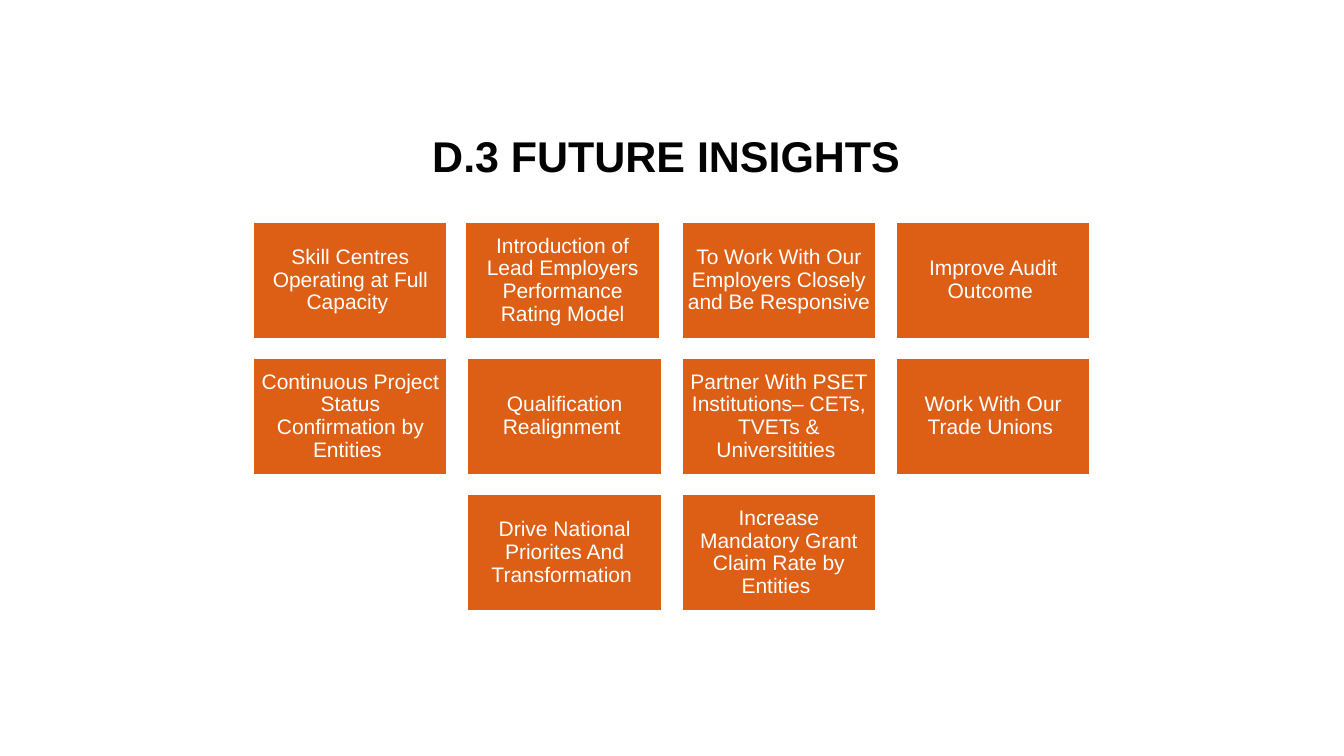
from pptx import Presentation
from pptx.dml.color import RGBColor
from pptx.enum.shapes import MSO_SHAPE
from pptx.enum.text import MSO_ANCHOR, PP_ALIGN
from pptx.util import Cm, Pt

ORANGE = RGBColor(0xDD, 0x5E, 0x15)
WHITE = RGBColor(0xFF, 0xFF, 0xFF)
BLACK = RGBColor(0x03, 0x03, 0x04)


def style(frame, size, color, bold, inset):
    frame.word_wrap = True
    frame.vertical_anchor = MSO_ANCHOR.MIDDLE
    frame.margin_left = frame.margin_right = Cm(inset)
    frame.margin_top = frame.margin_bottom = Cm(inset)
    para = frame.paragraphs[0]
    para.alignment = PP_ALIGN.CENTER
    para.line_spacing = 0.9
    font = para.runs[0].font
    font.name = "Arial"
    font.size = Pt(size)
    font.bold = bold
    font.color.rgb = color


deck = Presentation()
deck.slide_width = Cm(33.87)
deck.slide_height = Cm(19.05)
slide = deck.slides.add_slide(deck.slide_layouts[5])

title = slide.shapes.title
title.left, title.top = Cm(3.99), Cm(3.2)
title.width, title.height = Cm(25.91), Cm(1.6)
title.text_frame.text = "D.3 FUTURE INSIGHTS "
style(title.text_frame, 30.7, BLACK, True, 0.13)

rows = [
    (0, [
        "Skill Centres Operating at Full Capacity ",
        "Introduction of Lead Employers Performance Rating Model",
        "To Work With Our Employers Closely and Be Responsive ",
        "Improve Audit Outcome ",
    ]),
    (0, [
        "Continuous Project Status Confirmation by Entities ",
        "Qualification Realignment ",
        "Partner With PSET Institutions– CETs, TVETs & Universitities ",
        "Work With Our Trade Unions ",
    ]),
    (1, [
        "Drive National Priorites And Transformation ",
        "Increase Mandatory Grant Claim Rate by Entities ",
    ]),
]
shift = {(0, 1): -0.05}

for row, (start, goals) in enumerate(rows):
    for col, goal in enumerate(goals, start):
        left = 6.38 + 5.4 * col + shift.get((row, col), 0)
        top = 5.59 + 3.43 * row
        tile = slide.shapes.add_shape(
            MSO_SHAPE.RECTANGLE, Cm(left), Cm(top), Cm(4.9), Cm(2.95))
        tile.shadow.inherit = False
        tile.fill.solid()
        tile.fill.fore_color.rgb = ORANGE
        tile.line.color.rgb = WHITE
        tile.line.width = Pt(1.5)
        tile.text_frame.text = goal
        style(tile.text_frame, 15, WHITE, False, 0.15)

deck.save("out.pptx")
